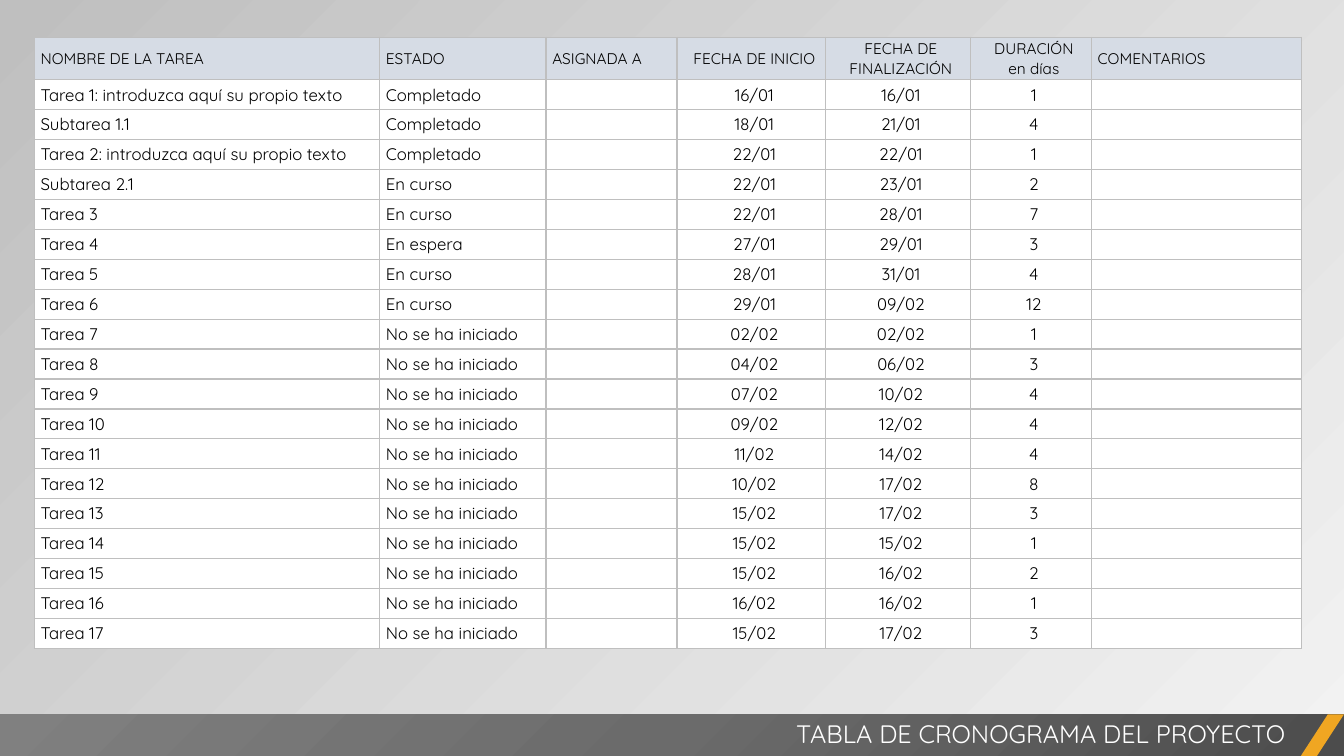
from lxml import etree
from pptx import Presentation
from pptx.dml.color import RGBColor
from pptx.enum import shapes, text
from pptx.oxml import ns, parse_xml
from pptx.util import Pt

FONT = "Quicksand"
BLACK = RGBColor(0x00, 0x00, 0x00)
WHITE = RGBColor(0xFF, 0xFF, 0xFF)
HEADER_BLUE = RGBColor(0xD6, 0xDC, 0xE5)
BORDER_GRAY = RGBColor(0xBF, 0xBF, 0xBF)
LIGHT_GRAY = RGBColor(0xF2, 0xF2, 0xF2)
BAND_DARK = RGBColor(0x4C, 0x4C, 0x4C)
BAND_MIDDLE = RGBColor(0x6B, 0x6B, 0x6B)
BAND_LIGHT = RGBColor(0x80, 0x80, 0x80)
ORANGE = RGBColor(0xF0, 0xA6, 0x22)

SLIDE_WIDTH, SLIDE_HEIGHT = 960, 540
BAND_TOP, BAND_HEIGHT = 510.3, 30
COLUMN_WIDTHS = [246.7, 118.8, 93.6, 106, 103.4, 86.6, 150.3]
HEADER_HEIGHT, ROW_HEIGHT = 30.2, 21.38
CENTERED_COLUMNS = (3, 4, 5)

HEADERS = ["NOMBRE DE LA TAREA", "ESTADO", "ASIGNADA A", "FECHA DE INICIO",
           "FECHA DE FINALIZACIÓN", "DURACIÓN\nen días", "COMENTARIOS"]
DONE, ACTIVE, WAITING, PENDING = (
    "Completado", "En curso", "En espera", "No se ha iniciado")
# Name, status, start date, end date, duration in days
TASKS = [
    ("Tarea 1: introduzca aquí su propio texto", DONE, "16/01", "16/01", "1"),
    ("Subtarea 1.1", DONE, "18/01", "21/01", "4"),
    ("Tarea 2: introduzca aquí su propio texto", DONE, "22/01", "22/01", "1"),
    ("Subtarea 2.1", ACTIVE, "22/01", "23/01", "2"),
    ("Tarea 3", ACTIVE, "22/01", "28/01", "7"),
    ("Tarea 4", WAITING, "27/01", "29/01", "3"),
    ("Tarea 5", ACTIVE, "28/01", "31/01", "4"),
    ("Tarea 6", ACTIVE, "29/01", "09/02", "12"),
    ("Tarea 7", PENDING, "02/02", "02/02", "1"),
    ("Tarea 8", PENDING, "04/02", "06/02", "3"),
    ("Tarea 9", PENDING, "07/02", "10/02", "4"),
    ("Tarea 10", PENDING, "09/02", "12/02", "4"),
    ("Tarea 11", PENDING, "11/02", "14/02", "4"),
    ("Tarea 12", PENDING, "10/02", "17/02", "8"),
    ("Tarea 13", PENDING, "15/02", "17/02", "3"),
    ("Tarea 14", PENDING, "15/02", "15/02", "1"),
    ("Tarea 15", PENDING, "15/02", "16/02", "2"),
    ("Tarea 16", PENDING, "16/02", "16/02", "1"),
    ("Tarea 17", PENDING, "15/02", "17/02", "3"),
]


def add_run(paragraph, content, size, color):
    run = paragraph.add_run()
    run.text = content
    run.font.name = FONT
    run.font.size = Pt(size)
    run.font.color.rgb = color


def set_background(slide):
    fill = slide.background.fill
    fill.gradient()
    fill.gradient_angle = 135
    for stop, color in zip(fill.gradient_stops, (LIGHT_GRAY, BORDER_GRAY)):
        stop.color.rgb = color


def set_borders(cell):
    properties = cell._tc.get_or_add_tcPr()
    for side in ("lnL", "lnR", "lnT", "lnB"):
        properties.append(parse_xml(
            f'<a:{side} {ns.nsdecls("a")} w="{Pt(1)}"><a:solidFill>'
            f'<a:srgbClr val="{BORDER_GRAY}"/></a:solidFill></a:{side}>'))


def fill_cell(cell, content, size, color, centered):
    set_borders(cell)
    cell.fill.solid()
    cell.fill.fore_color.rgb = color
    cell.margin_left = Pt(4.5)
    cell.margin_right = cell.margin_top = cell.margin_bottom = 0
    cell.vertical_anchor = text.MSO_ANCHOR.MIDDLE
    frame = cell.text_frame
    for index, line in enumerate(content.split("\n")):
        paragraph = frame.add_paragraph() if index else frame.paragraphs[0]
        if centered:
            paragraph.alignment = text.PP_ALIGN.CENTER
        if line:
            add_run(paragraph, line, size, BLACK)
        else:
            # An empty cell keeps the small text size, so its row stays low
            etree.SubElement(paragraph._p, ns.qn("a:endParaRPr"), sz=str(size * 100))


def add_schedule(slide):
    rows = [HEADERS] + [
        [name, status, "", start, end, days, ""]
        for name, status, start, end, days in TASKS]
    frame = slide.shapes.add_table(
        len(rows), len(HEADERS), Pt(24.5), Pt(26.8), Pt(sum(COLUMN_WIDTHS)),
        Pt(HEADER_HEIGHT + ROW_HEIGHT * len(TASKS)))
    table = frame.table
    table.first_row = table.horz_banding = False
    for column, width in zip(table.columns, COLUMN_WIDTHS):
        column.width = Pt(width)
    for row_index, row in enumerate(rows):
        is_header = row_index == 0
        table.rows[row_index].height = Pt(HEADER_HEIGHT if is_header else ROW_HEIGHT)
        for column_index, content in enumerate(row):
            fill_cell(table.cell(row_index, column_index), content,
                      11 if is_header else 12,
                      HEADER_BLUE if is_header else WHITE,
                      column_index in CENTERED_COLUMNS)


def add_band_shape(slide, kind, left, width):
    shape = slide.shapes.add_shape(
        kind, Pt(left), Pt(BAND_TOP), Pt(width), Pt(BAND_HEIGHT))
    shape.shadow.inherit = False
    shape.line.fill.background()
    shape.fill.solid()
    return shape


def set_radial_gradient(shape, colors):
    stops = "".join(
        f'<a:gs pos="{100000 * index // (len(colors) - 1)}">'
        f'<a:srgbClr val="{color}"/></a:gs>'
        for index, color in enumerate(colors))
    gradient = parse_xml(
        f'<a:gradFill {ns.nsdecls("a")} rotWithShape="1"><a:gsLst>{stops}</a:gsLst>'
        '<a:path path="circle"><a:fillToRect l="100000" t="100000"/></a:path>'
        '</a:gradFill>')
    properties = shape._element.spPr
    properties.replace(properties.find(ns.qn("a:solidFill")), gradient)


def add_title(slide):
    box = slide.shapes.add_textbox(Pt(378), Pt(509.8), Pt(547.2), Pt(29))
    frame = box.text_frame
    frame.word_wrap = True
    paragraph = frame.paragraphs[0]
    paragraph.alignment = text.PP_ALIGN.RIGHT
    add_run(paragraph, "TABLA DE CRONOGRAMA DEL PROYECTO", 18, WHITE)


def main():
    presentation = Presentation()
    presentation.slide_width = Pt(SLIDE_WIDTH)
    presentation.slide_height = Pt(SLIDE_HEIGHT)
    slide = presentation.slides.add_slide(presentation.slide_layouts[6])
    set_background(slide)

    # Schedule table
    add_schedule(slide)

    # Bottom band with its accent and title
    band = add_band_shape(slide, shapes.MSO_SHAPE.RECTANGLE, 0, SLIDE_WIDTH)
    set_radial_gradient(band, (BAND_DARK, BAND_MIDDLE, BAND_LIGHT))
    accent = add_band_shape(slide, shapes.MSO_SHAPE.PARALLELOGRAM, 929, 31)
    accent.adjustments[0] = 0.65
    accent.fill.fore_color.rgb = ORANGE
    add_title(slide)

    presentation.save("out.pptx")


if __name__ == "__main__":
    main()
